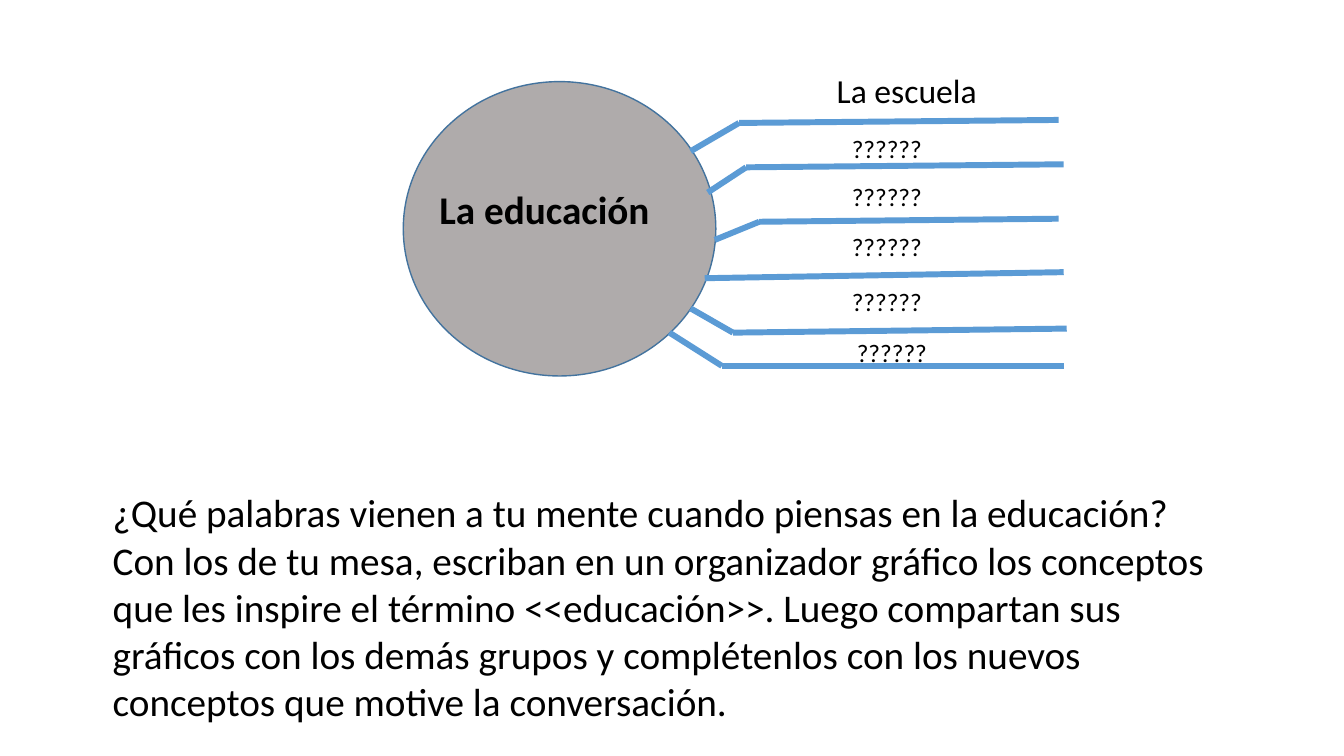
from itertools import pairwise

from lxml.etree import SubElement
from pptx import Presentation
from pptx.dml.color import RGBColor
from pptx.enum.shapes import MSO_CONNECTOR as Connector, MSO_SHAPE as Preset
from pptx.enum.text import MSO_AUTO_SIZE as AutoSize
from pptx.oxml.ns import qn
from pptx.util import Inches, Pt

TASK = (
    "¿Qué palabras vienen a tu mente cuando piensas en la educación? "
    "Con los de tu mesa, escriban en un organizador gráfico los conceptos "
    "que les inspire el término <<educación>>. Luego compartan sus gráficos "
    "con los demás grupos y complétenlos con los nuevos conceptos que motive "
    "la conversación."
)
# Corner points of each branch, from the circle outwards
BRANCHES = [
    [(6.85, 1.5), (7.33, 1.22), (10.5, 1.19)],
    [(7.02, 1.91), (7.4, 1.66), (10.55, 1.63)],
    [(7.09, 2.38), (7.53, 2.2), (10.5, 2.17)],
    [(6.99, 2.76), (10.55, 2.7)],
    [(6.85, 3.06), (7.27, 3.3), (10.58, 3.26)],
    [(6.64, 3.3), (7.16, 3.63), (10.55, 3.63)],
]
BLANK_SPOTS = [(8.35, 1.27), (8.35, 1.75), (8.35, 2.25), (8.35, 2.79), (8.4, 3.3)]


def color(value):
    return RGBColor.from_string(value)


class MindMap:
    font = "Calibri"
    ink = "000000"
    circle_fill = "AFABAB"
    circle_line = "43739E"
    branch_line = "5B9BD5"

    def __init__(self, page):
        self.page = page

    def text(self, words, left, top, width, height, **style):
        box = self.page.shapes.add_textbox(*map(Inches, (left, top, width, height)))
        frame = box.text_frame
        frame.word_wrap = True
        frame.auto_size = AutoSize.SHAPE_TO_FIT_TEXT
        span = frame.paragraphs[0].add_run()
        span.text = words
        for name, value in ({"name": self.font} | style).items():
            setattr(span.font, name, value)
        span.font.color.rgb = color(self.ink)

    def circle(self, left, top, width, height):
        shape = self.page.shapes.add_shape(
            Preset.OVAL, *map(Inches, (left, top, width, height)))
        shape.shadow.inherit = False
        shape.fill.solid()
        shape.fill.fore_color.rgb = color(self.circle_fill)
        shape.line.color.rgb = color(self.circle_line)
        shape.line.width = Pt(1)

    def branch(self, points):
        """Draw one straight line between each two neighbouring points."""
        for start, end in pairwise(points):
            line = self.page.shapes.add_connector(
                Connector.STRAIGHT, *map(Inches, start + end))
            line.line.color.rgb = color(self.branch_line)
            line.line.width = Pt(4.25)
            SubElement(line._element.spPr, qn("a:effectLst"))


def main():
    deck = Presentation()
    deck.slide_width, deck.slide_height = Inches(13.33), Inches(7.5)
    mind_map = MindMap(deck.slides.add_slide(deck.slide_layouts[6]))

    mind_map.text(TASK, 1.02, 4.8, 11.03, 2.46, size=Pt(28))
    mind_map.circle(4, 0.81, 3.1, 2.92)
    mind_map.text("La educación", 4.26, 1.79, 2.65, 0.57, size=Pt(28), bold=True)
    for points in BRANCHES:
        mind_map.branch(points)
    mind_map.text("La escuela", 8.2, 0.64, 1.88, 0.5, size=Pt(24))
    for left, top in BLANK_SPOTS:
        mind_map.text("??????", left, top, 1.23, 0.4, size=Pt(18))

    deck.save("out.pptx")


if __name__ == "__main__":
    main()
